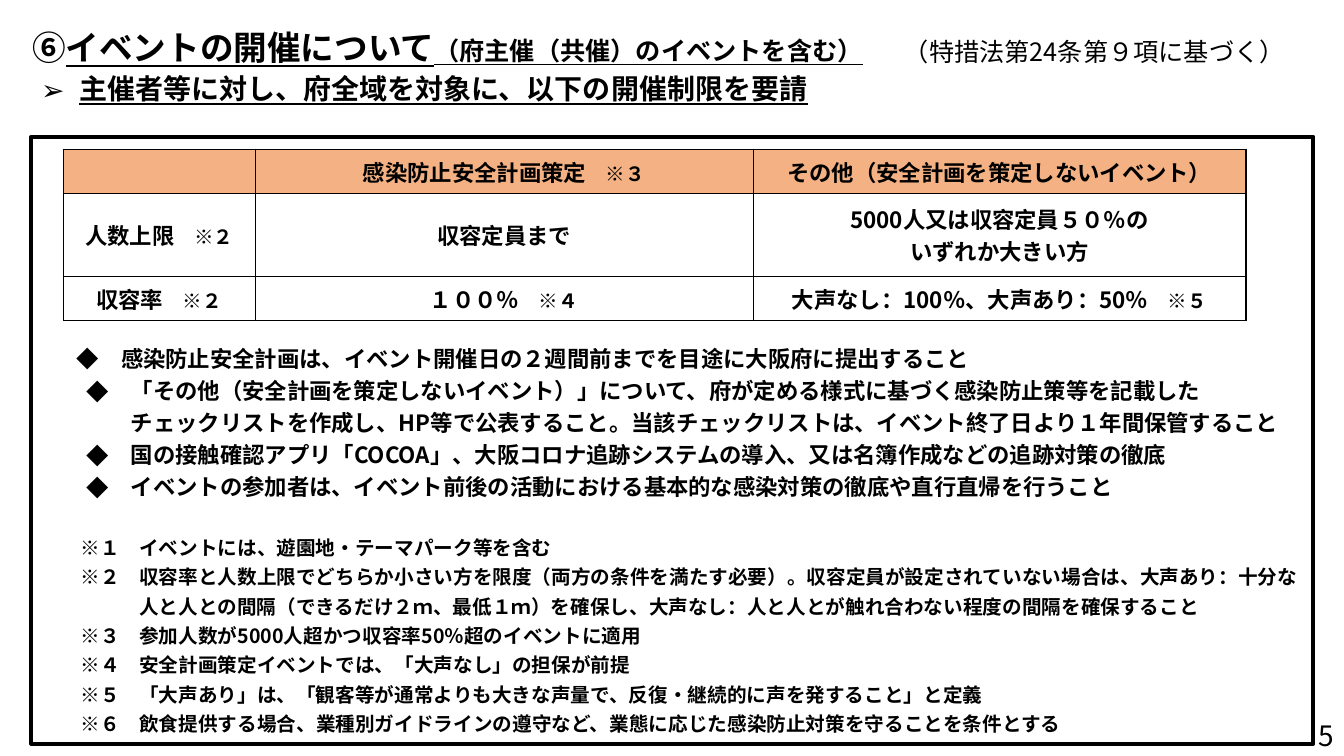
from dataclasses import dataclass

from lxml.etree import SubElement
from pptx import Presentation
from pptx.dml.color import RGBColor
from pptx.enum.shapes import MSO_SHAPE
from pptx.enum.text import MSO_ANCHOR, PP_ALIGN
from pptx.oxml.ns import qn
from pptx.util import Cm, Pt


@dataclass(frozen=True)
class Theme:
    """Colours, fonts and type sizes of the slide."""
    ink: RGBColor = RGBColor(0, 0, 0)
    header: RGBColor = RGBColor(0xF4, 0xB1, 0x83)
    font: str = "Noto Sans CJK JP"
    latin: str = "Arial"
    title: int = 24
    lead: int = 20
    aside: int = 18
    body: int = 16
    note: int = 14
    wide_line: int = 23
    lead_line: int = 20
    note_line: int = 21


THEME = Theme()


@dataclass(frozen=True)
class Span:
    """A stretch of text in one style."""
    text: str
    size: int = THEME.body
    bold: bool = True
    underline: bool = False
    latin: str = THEME.font


class SlideBuilder:
    """Draws styled elements on one slide."""

    def __init__(self, page, theme):
        """Keep the page and its theme."""
        self.page = page
        self.theme = theme

    def style(self, run, span):
        """Apply the style of a span to a run."""
        font = run.font
        font.size = Pt(span.size)
        font.bold = span.bold
        if span.underline:
            font.underline = True
        font.color.rgb = self.theme.ink
        font.name = span.latin
        SubElement(font._element, qn("a:ea"), typeface=self.theme.font)

    def set_spans(self, para, spans, line=None):
        """Fill a paragraph with spans."""
        para.text = spans[0].text
        for run in para.runs:
            self.style(run, spans[0])
        for span in spans[1:]:
            run = para.add_run()
            run.text = span.text
            self.style(run, span)
        if line:
            para.line_spacing = Pt(line)

    def hang(self, para, margin, hanging, bullet=None):
        """Give a paragraph a hanging indent and an optional bullet."""
        properties = para._p.get_or_add_pPr()
        properties.set("marL", str(Pt(margin)))
        properties.set("indent", str(-Pt(hanging)))
        if bullet:
            SubElement(properties, qn("a:buFont"), typeface=self.theme.font)
            SubElement(properties, qn("a:buChar"), char=bullet)

    def text_frame(self, left, top, width, height):
        """Add a wrapping text box and return its frame."""
        box = self.page.shapes.add_textbox(Cm(left), Cm(top), Cm(width), Cm(height))
        box.text_frame.word_wrap = True
        return box.text_frame

    def text(self, place, spans, line=None):
        """Add a box with one paragraph and return its frame."""
        frame = self.text_frame(*place)
        self.set_spans(frame.paragraphs[0], spans, line)
        return frame

    def border_box(self, left, top, width, height):
        """Add an unfilled rectangle with a heavy outline."""
        box = self.page.shapes.add_shape(
            MSO_SHAPE.RECTANGLE, Cm(left), Cm(top), Cm(width), Cm(height))
        box.shadow.inherit = False
        box.fill.background()
        box.line.color.rgb = self.theme.ink
        box.line.width = Pt(3)

    def guidance(self, place, bullets, notes):
        """Add the bulleted requests followed by the numbered notes."""
        theme = self.theme
        frame = self.text_frame(*place)
        para = frame.paragraphs[0]
        for index, (margin, words) in enumerate(bullets):
            if index:
                para = frame.add_paragraph()
            self.hang(para, margin, 2 * theme.body, "◆")
            self.set_spans(para, [Span(words)], theme.wide_line)
        for index, spans in enumerate(notes):
            para = frame.add_paragraph()
            self.hang(para, 5 * theme.note, 3 * theme.note)
            self.set_spans(para, spans, theme.note_line)
            if index == 0:
                para.space_before = Pt(theme.note_line)

    def border(self, cell):
        """Outline a table cell."""
        properties = cell._tc.get_or_add_tcPr()
        for side in ("lnL", "lnR", "lnT", "lnB"):
            edge = SubElement(properties, qn(f"a:{side}"), w=str(Pt(1)))
            fill = SubElement(edge, qn("a:solidFill"))
            SubElement(fill, qn("a:srgbClr"), val=str(self.theme.ink))

    def table(self, left, top, widths, heights, rows):
        """Add a bordered table with a coloured header row."""
        table = self.page.shapes.add_table(
            len(rows), len(widths), Cm(left), Cm(top),
            Cm(sum(widths)), Cm(sum(heights))).table
        for column, width in zip(table.columns, widths):
            column.width = Cm(width)
        for row_index, (row, height) in enumerate(zip(rows, heights)):
            table.rows[row_index].height = Cm(height)
            for column_index, (words, mark) in enumerate(row):
                cell = table.cell(row_index, column_index)
                cell.vertical_anchor = MSO_ANCHOR.MIDDLE
                self.border(cell)
                if row_index == 0:
                    cell.fill.solid()
                    cell.fill.fore_color.rgb = self.theme.header
                else:
                    cell.fill.background()
                cell.text_frame.text = words
                for para in cell.text_frame.paragraphs:
                    para.alignment = PP_ALIGN.CENTER
                    if words:
                        self.set_spans(para, [Span(para.text)])
                if mark:
                    run = para.add_run()
                    run.text = f"　{mark}"
                    self.style(run, Span(run.text, self.theme.note))


LIMITS = [
    [("", ""), ("感染防止安全計画策定", "※３"), ("その他（安全計画を策定しないイベント）", "")],
    [("人数上限", "※２"), ("収容定員まで", ""), ("5000人又は収容定員５０％の\nいずれか大きい方", "")],
    [("収容率", "※２"), ("１００％", "※４"), ("大声なし：100％、大声あり：50％", "※５")],
]
REQUESTS = [
    (57, "感染防止安全計画は、イベント開催日の２週間前までを目途に大阪府に提出すること"),
    (64, "「その他（安全計画を策定しないイベント）」について、府が定める様式に基づく感染防止策等を記載した\v"
         "チェックリストを作成し、HP等で公表すること。当該チェックリストは、イベント終了日より１年間保管すること"),
    (64, "国の接触確認アプリ「COCOA」、大阪コロナ追跡システムの導入、又は名簿作成などの追跡対策の徹底"),
    (64, "イベントの参加者は、イベント前後の活動における基本的な感染対策の徹底や直行直帰を行うこと"),
]
NOTES = [[Span(words, THEME.note)] for words in (
    "※１　イベントには、遊園地・テーマパーク等を含む",
    "※２　収容率と人数上限でどちらか小さい方を限度（両方の条件を満たす必要）。収容定員が設定されていない場合は、大声あり：十分な\v"
    "人と人との間隔（できるだけ２ｍ、最低１ｍ）を確保し、大声なし：人と人とが触れ合わない程度の間隔を確保すること",
    "※３　参加人数が5000人超かつ収容率50％超のイベントに適用",
    "※４　安全計画策定イベントでは、「大声なし」の担保が前提",
    "※５　「大声あり」は、「観客等が通常よりも大きな声量で、反復・継続的に声を発すること」と定義",
    "※６　",
)]
NOTES[-1].append(Span(
    "飲食提供する場合、業種別ガイドラインの遵守など、業態に応じた感染防止対策を守ることを条件とする",
    THEME.note, latin=THEME.latin))


def main():
    """Build and save the deck."""
    deck = Presentation()
    deck.slide_width, deck.slide_height = Cm(33.87), Cm(19.05)
    builder = SlideBuilder(deck.slides.add_slide(deck.slide_layouts[6]), THEME)
    number = builder.text((26.25, 18.03, 7.62, 1.02), [Span("5", THEME.lead, bold=False)])
    number.vertical_anchor = MSO_ANCHOR.MIDDLE
    number.paragraphs[0].alignment = PP_ALIGN.RIGHT
    builder.text((0.56, 0.56, 23.93, 1.27), [
        Span("⑥", THEME.title),
        Span("イベントの開催について", THEME.title, underline=True),
        Span("（府主催（共催）のイベントを含む）", THEME.aside, underline=True)])
    lead = builder.text((0.79, 1.83, 31.39, 0.99), [
        Span("主催者等に対し、府全域を対象に、以下の開催制限を要請", THEME.lead, underline=True)],
        THEME.lead_line)
    builder.hang(lead.paragraphs[0], 27, 27, "➢")
    builder.text((22.53, 0.74, 10.24, 1.42), [
        Span("（特措法第24条第９項に基づく）", THEME.aside, bold=False)], THEME.wide_line)
    builder.guidance((0.79, 8.43, 32.8, 10.2), REQUESTS, NOTES)
    builder.border_box(0.79, 3.45, 32.31, 15.29)
    builder.table(1.6, 3.76, (4.83, 12.55, 12.42), (1.12, 2.08, 1.12), LIMITS)
    deck.save("out.pptx")


if __name__ == "__main__":
    main()
